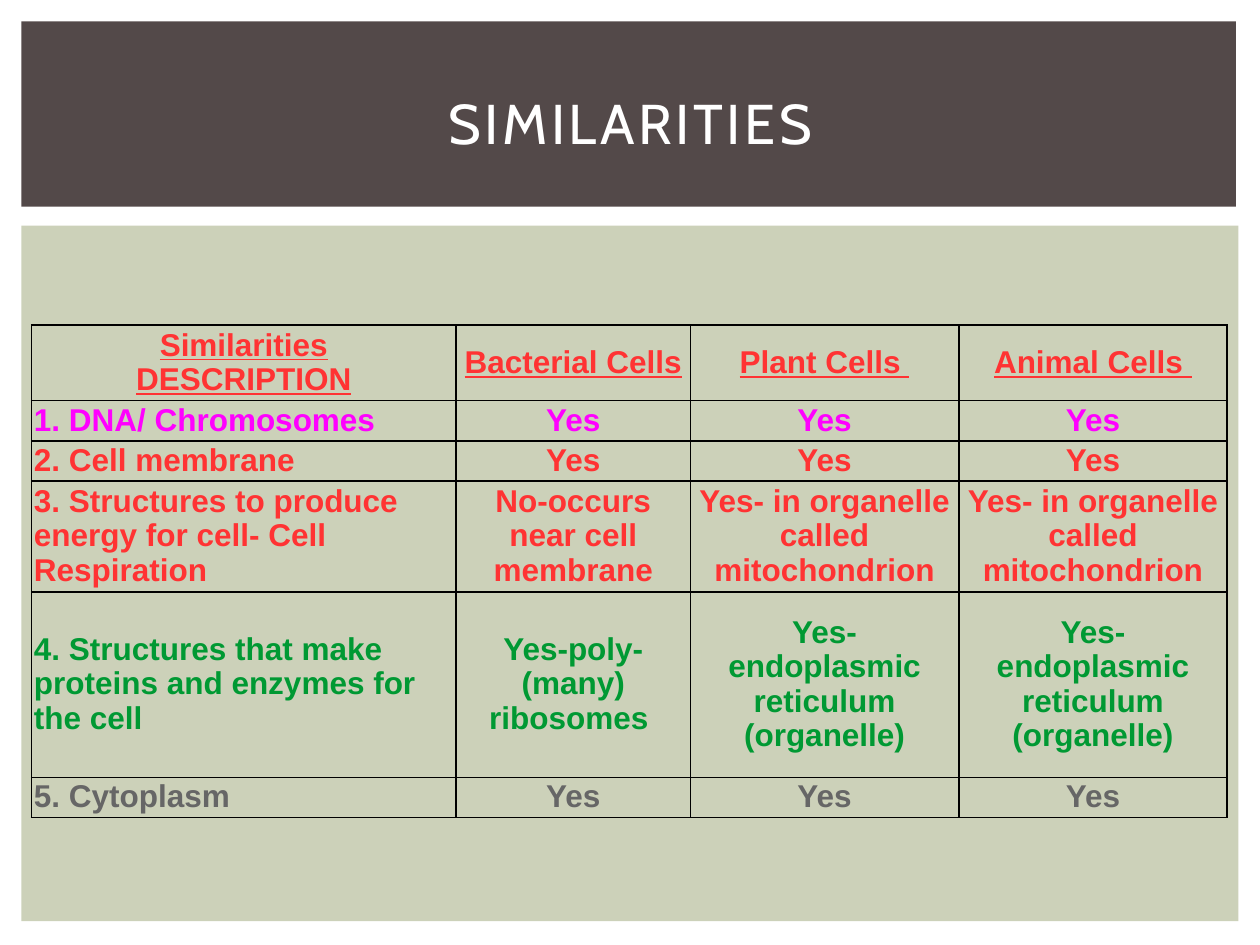
import pptx
import pptx.util
import pptx.dml.color
import pptx.enum.shapes
import pptx.enum.text
import pptx.oxml
import pptx.oxml.ns
from dataclasses import dataclass

Inches = pptx.util.Inches
Align = pptx.enum.text.PP_ALIGN
Anchor = pptx.enum.text.MSO_ANCHOR


@dataclass(frozen=True)
class Theme:
    band: str = "534949"
    panel: str = "CCD1B9"
    white: str = "FFFFFF"
    black: str = "000000"
    red: str = "FF3333"
    pink: str = "FF00FF"
    green: str = "009933"
    gray: str = "666666"
    head: str = "Cabin"
    body: str = "Arial"
    large: int = 32
    small: int = 18


THEME = Theme()

# Each row: text color, then one text per column
ROWS = [
    (THEME.red, "Similarities\nDESCRIPTION", "Bacterial Cells",
     "Plant Cells ", "Animal Cells "),
    (THEME.pink, "1. DNA/ Chromosomes", "Yes", "Yes", "Yes"),
    (THEME.red, "2. Cell membrane", "Yes", "Yes", "Yes"),
    (THEME.red, "3. Structures to produce energy for cell- Cell Respiration",
     "No-occurs near cell membrane",
     "Yes- in organelle called mitochondrion",
     "Yes- in organelle called mitochondrion"),
    (THEME.green, "4. Structures that make proteins and enzymes for the cell",
     "Yes-poly- (many) ribosomes ",
     "Yes- endoplasmic reticulum (organelle)",
     "Yes- endoplasmic reticulum (organelle)"),
    (THEME.gray, "5. Cytoplasm", "Yes", "Yes", "Yes"),
]
WIDTHS = [3.37, 1.86, 2.13, 2.13]
HEIGHTS = [0.6, 0.32, 0.32, 0.88, 1.47, 0.32]


def tint(code):
    return pptx.dml.color.RGBColor.from_string(code)


def write(frame, text, font, size, color, align=Align.CENTER,
          bold=False, under=False, gap=0, lead=1.0):
    """Fill a text frame, one paragraph per line of text."""
    frame.word_wrap = True
    for i, line in enumerate(text.split("\n")):
        para = frame.add_paragraph() if i else frame.paragraphs[0]
        para.alignment = align
        para.line_spacing = lead
        run = para.add_run()
        run.text = line
        run.font.name = font
        run.font.size = pptx.util.Pt(size)
        run.font.bold = bold
        run.font.underline = under
        run.font.color.rgb = tint(color)
        if gap:
            run.font._element.set("spc", str(gap * 100))


def block(slide, left, top, width, height, color):
    shape = slide.shapes.add_shape(
        pptx.enum.shapes.MSO_SHAPE.RECTANGLE,
        Inches(left), Inches(top), Inches(width), Inches(height))
    shape.shadow.inherit = False
    shape.fill.solid()
    shape.fill.fore_color.rgb = tint(color)
    shape.line.fill.background()


def title(slide, text):
    box = slide.shapes.add_textbox(
        Inches(0.42), Inches(0.39), Inches(9.17), Inches(1.15))
    box.text_frame.vertical_anchor = Anchor.MIDDLE
    write(box.text_frame, text, THEME.head, THEME.large, THEME.white, gap=2)


def border(cell):
    """Draw a thin line on all four sides of a cell."""
    props = cell._tc.get_or_add_tcPr()
    for i, side in enumerate(("lnL", "lnR", "lnT", "lnB")):
        props.insert(i, pptx.oxml.parse_xml(
            f'<a:{side} {pptx.oxml.ns.nsdecls("a")} w="12700"><a:solidFill>'
            f'<a:srgbClr val="{THEME.black}"/></a:solidFill></a:{side}>'))


def grid(slide):
    table = slide.shapes.add_table(
        len(HEIGHTS), len(WIDTHS), Inches(0.25), Inches(2.58),
        Inches(sum(WIDTHS)), Inches(sum(HEIGHTS))).table
    table.first_row = table.horz_banding = False
    for col, width in zip(table.columns, WIDTHS):
        col.width = Inches(width)
    for r, (color, *texts) in enumerate(ROWS):
        table.rows[r].height = Inches(HEIGHTS[r])
        for c, text in enumerate(texts):
            cell = table.cell(r, c)
            cell.margin_left = cell.margin_right = Inches(0.02)
            cell.margin_top = cell.margin_bottom = Inches(0.02)
            cell.vertical_anchor = Anchor.MIDDLE
            cell.fill.background()
            border(cell)
            align = Align.LEFT if r and not c else Align.CENTER
            write(cell.text_frame, text, THEME.body, THEME.small, color,
                  align=align, bold=True, under=r == 0, lead=0.97)


def main():
    deck = pptx.Presentation()
    deck.slide_width, deck.slide_height = Inches(10), Inches(7.5)
    slide = deck.slides.add_slide(deck.slide_layouts[6])
    # Background panel and title band
    block(slide, 0.17, 1.79, 9.66, 5.52, THEME.panel)
    block(slide, 0.17, 0.17, 9.64, 1.47, THEME.band)
    # Content
    grid(slide)
    title(slide, "SIMILARITIES")
    deck.save("out.pptx")


if __name__ == "__main__":
    main()
